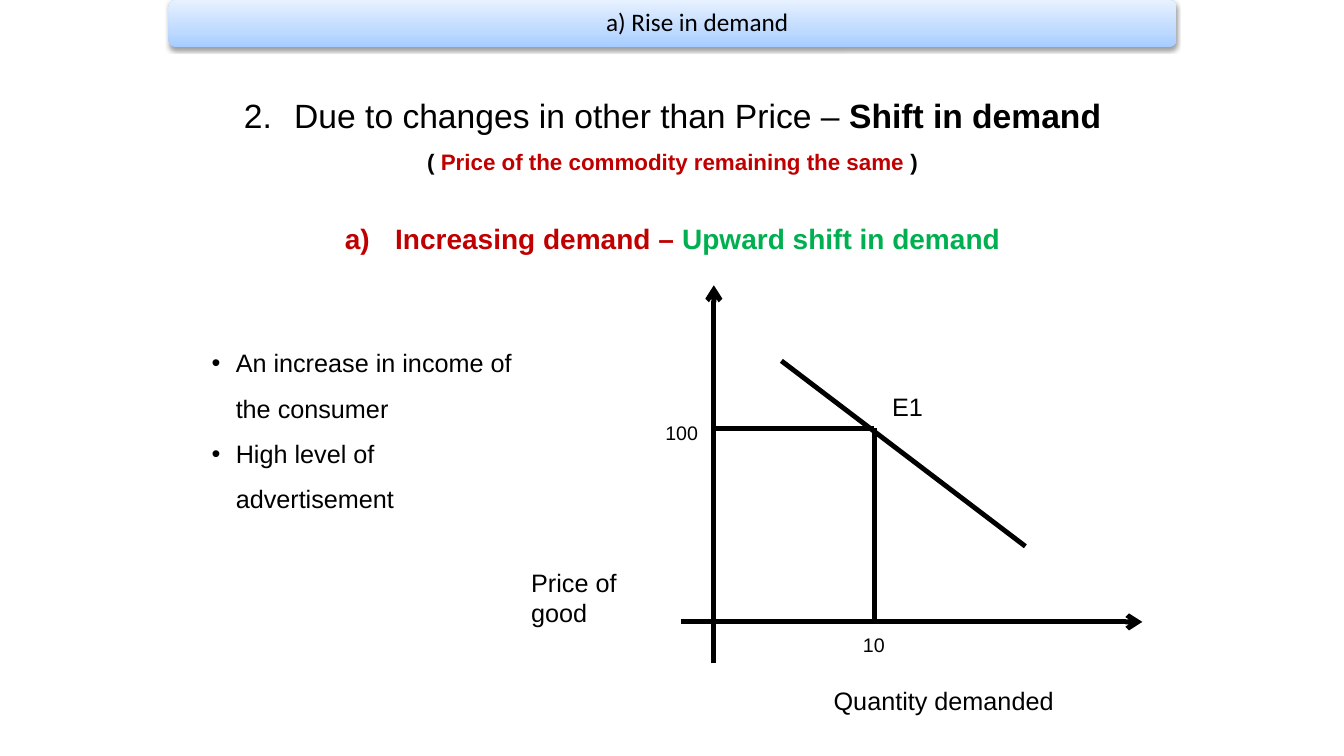
from lxml import etree
from pptx import Presentation
from pptx.dml.color import RGBColor
from pptx.enum import shapes, text
from pptx.oxml import parse_xml
from pptx.oxml.ns import nsdecls, qn
from pptx.util import Inches, Pt

BLACK = RGBColor(0, 0, 0)
RED = RGBColor(0xC0, 0, 0)
GREEN = RGBColor(0, 0xB0, 0x50)


def add_run(paragraph, words, size, color=BLACK, bold=False, font="Arial"):
    run = paragraph.add_run()
    run.text = words
    run.font.name = font
    run.font.size = Pt(size)
    run.font.bold = bold
    run.font.color.rgb = color


def set_marker(paragraph, indent, tag, **attributes):
    properties = paragraph._p.get_or_add_pPr()
    properties.set("marL", str(Inches(indent)))
    properties.set("indent", str(-Inches(indent)))
    if tag == "a:buChar":
        etree.SubElement(properties, qn("a:buFont")).set("typeface", "Arial")
    etree.SubElement(properties, qn(tag), attributes)


presentation = Presentation()
presentation.slide_width = Inches(13.33)
presentation.slide_height = Inches(7.5)
slide = presentation.slides.add_slide(presentation.slide_layouts[5])

# Banner with gradient and soft shadow
banner = slide.shapes.add_shape(
    shapes.MSO_SHAPE.ROUNDED_RECTANGLE, Inches(1.67), Inches(0), Inches(10), Inches(0.47))
banner.line.fill.background()
stops = "".join(
    f'<a:gs pos="{position * 1000}"><a:srgbClr val="{color}"/></a:gs>'
    for position, color in [(0, "A5CCFF"), (35, "BFDAFF"), (100, "E7F1FF")])
gradient = parse_xml(
    f'<a:gradFill {nsdecls("a")} rotWithShape="1"><a:gsLst>{stops}</a:gsLst>'
    '<a:lin ang="16200000" scaled="0"/></a:gradFill>')
shadow = parse_xml(
    f'<a:effectLst {nsdecls("a")}><a:outerShdw blurRad="{Pt(3.1)}" dist="{Pt(1.6)}" '
    'dir="5400000" rotWithShape="0"><a:srgbClr val="000000"><a:alpha val="38000"/>'
    '</a:srgbClr></a:outerShdw></a:effectLst>')
banner_properties = banner.element.spPr
banner_properties.find(qn("a:prstGeom")).addnext(gradient)
banner_properties.append(shadow)

# Title in front of the banner
title = slide.shapes.title
banner.element.addnext(title.element)
title.left, title.top, title.width, title.height = map(Inches, (1.69, 0.02, 9.95, 0.43))
frame = title.text_frame
frame.auto_size = text.MSO_AUTO_SIZE.NONE
frame.vertical_anchor = text.MSO_ANCHOR.MIDDLE
frame.margin_top = frame.margin_right = frame.margin_bottom = Inches(0.07)
frame.margin_left = Inches(0.57)
paragraph = frame.paragraphs[0]
paragraph.alignment = text.PP_ALIGN.CENTER
paragraph.line_spacing = 0.9
add_run(paragraph, "a) Rise in demand", 18, font="Calibri")

# Headings: marker attributes, space before, size, runs
headings = [
    ({"type": "arabicPeriod", "startAt": "2"}, 0, 24,
     [("Due to changes in other than Price – ", BLACK, False),
      ("Shift in demand", BLACK, True)]),
    (None, 0, 16,
     [("( ", BLACK, True), ("Price of the commodity remaining the same ", RED, True),
      (")", BLACK, True)]),
    ({"type": "alphaLcParenR"}, 21, 20,
     [("Increasing demand – ", RED, True), ("Upward shift in demand", GREEN, True)]),
]
frame = slide.shapes.add_textbox(
    Inches(1.67), Inches(0.69), Inches(10), Inches(2.03)).text_frame
frame.word_wrap = True
for index, (numbering, space, size, runs) in enumerate(headings):
    paragraph = frame.add_paragraph() if index else frame.paragraphs[0]
    paragraph.alignment = text.PP_ALIGN.CENTER
    paragraph.line_spacing = 1.5
    paragraph.space_before = Pt(space)
    if numbering:
        set_marker(paragraph, 0.5, "a:buAutoNum", **numbering)
    else:
        set_marker(paragraph, 0.5, "a:buNone")
    for words, color, bold in runs:
        add_run(paragraph, words, size, color, bold)

# Causes of the rise
causes = ["An increase in income of the consumer", "High level of advertisement"]
frame = slide.shapes.add_textbox(
    Inches(2), Inches(3.25), Inches(3.33), Inches(1.77)).text_frame
frame.word_wrap = True
for index, cause in enumerate(causes):
    paragraph = frame.add_paragraph() if index else frame.paragraphs[0]
    paragraph.line_spacing = 1.5
    set_marker(paragraph, 0.24, "a:buChar", char="•")
    add_run(paragraph, cause, 18)

# Axes, demand curve and guides to the equilibrium point
axis_x, axis_y = 7.08, 6.17
point_x, point_y = 8.67, 4.25
diagram_lines = [
    (axis_x, 6.58, axis_x, 2.83, True),
    (6.75, axis_y, 11.33, axis_y, True),
    (7.75, 3.58, 10.17, 5.42, False),
    (axis_x, point_y, point_x, point_y, False),
    (point_x, point_y, point_x, axis_y, False),
]
for *ends, has_arrow in diagram_lines:
    connector = slide.shapes.add_connector(
        shapes.MSO_CONNECTOR.STRAIGHT, *map(Inches, ends))
    connector.line.color.rgb = BLACK
    connector.line.width = Pt(3.5)
    if has_arrow:
        etree.SubElement(connector.line._get_or_add_ln(), qn("a:tailEnd"), type="arrow")
    etree.SubElement(connector.element.spPr, qn("a:effectLst"))

# Diagram labels
labels = [
    ("Quantity demanded", 8.17, 6.75, 2.42, 0.4, 18),
    ("Price of good", 5.17, 5.58, 1.6, 0.71, 18),
    ("100", 6.5, 4.13, 0.71, 0.33, 14),
    ("10", 8.46, 6.23, 0.75, 0.34, 14),
    ("E1", 8.75, 3.83, 0.67, 0.4, 18),
]
for words, left, top, width, height, size in labels:
    frame = slide.shapes.add_textbox(
        Inches(left), Inches(top), Inches(width), Inches(height)).text_frame
    frame.word_wrap = True
    add_run(frame.paragraphs[0], words, size)

presentation.save("out.pptx")
